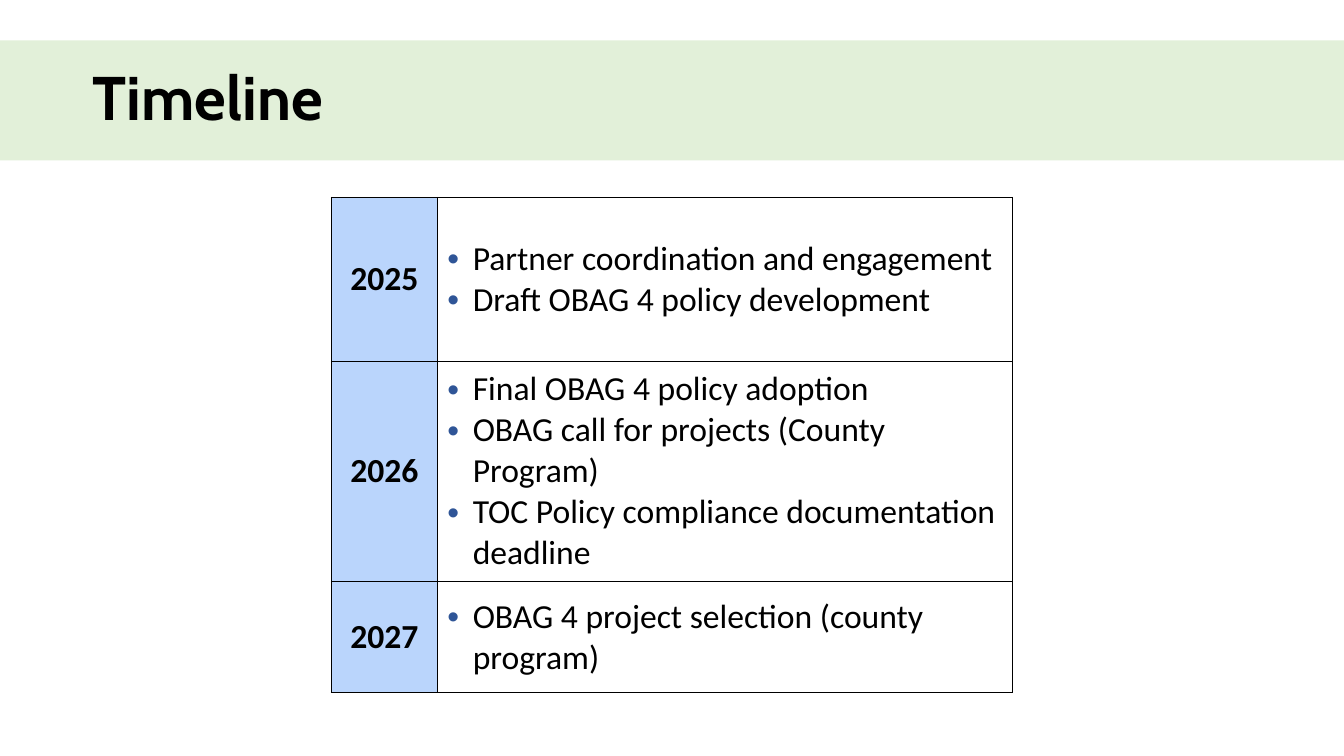
from lxml.etree import SubElement
from pptx import Presentation
from pptx.dml.color import RGBColor
from pptx.enum.text import MSO_ANCHOR as Anchor, PP_ALIGN as Align
from pptx.oxml.ns import qn
from pptx.util import Cm, Pt

BLACK, WHITE = "000000", "FFFFFF"
BAND_GREEN, YEAR_BLUE, BULLET_BLUE = "E2F0D9", "BAD5FC", "2F5597"

MILESTONES = [
    ("2025", 4.13, ["Partner coordination and engagement",
                    "Draft OBAG 4 policy development"]),
    ("2026", 5.56, ["Final OBAG 4 policy adoption",
                    "OBAG call for projects (County Program)",
                    "TOC Policy compliance documentation deadline"]),
    ("2027", 2.79, ["OBAG 4 project selection (county program)"]),
]


def paint(fill, color):
    fill.solid()
    fill.fore_color.rgb = RGBColor.from_string(color)


def style_text(para, font_name, size, bold):
    for span in para.runs:
        span.font.name = font_name
        span.font.size = Pt(size)
        span.font.bold = bold
        span.font.color.rgb = RGBColor.from_string(BLACK)


deck = Presentation()
deck.slide_width, deck.slide_height = Cm(33.87), Cm(19.05)
page = deck.slides.add_slide(deck.slide_layouts[5])

# Title band
title = page.shapes.title
title.left, title.top, title.width, title.height = Cm(0), Cm(1.02), Cm(33.87), Cm(3.02)
paint(title.fill, BAND_GREEN)
title.text_frame.text = "Timeline"
title.text_frame.vertical_anchor = Anchor.MIDDLE
para = title.text_frame.paragraphs[0]
para.alignment = Align.LEFT
para.line_spacing = 0.9
para._p.get_or_add_pPr().set("marL", str(Cm(2.08)))
style_text(para, "Cabin", 44, True)

# Timeline table
total_height = sum(height for _, height, _ in MILESTONES)
table = page.shapes.add_table(len(MILESTONES), 2, Cm(8.35), Cm(4.97),
                              Cm(17.17), Cm(total_height)).table
table.first_row = table.horz_banding = False
table.columns[0].width, table.columns[1].width = Cm(2.67), Cm(14.5)

for row, (year, height, tasks) in enumerate(MILESTONES):
    table.rows[row].height = Cm(height)
    year_cell, task_cell = table.cell(row, 0), table.cell(row, 1)
    year_cell.text_frame.text = year
    task_cell.text_frame.text = "\n".join(tasks)

    # Borders and fills
    for cell, color in ((year_cell, YEAR_BLUE), (task_cell, WHITE)):
        cell.vertical_anchor = Anchor.MIDDLE
        properties = cell._tc.get_or_add_tcPr()
        for side in ("a:lnL", "a:lnR", "a:lnT", "a:lnB"):
            line = SubElement(properties, qn(side), w=str(Pt(0.75)))
            SubElement(SubElement(line, qn("a:solidFill")), qn("a:srgbClr"), val=BLACK)
        paint(cell.fill, color)

    # Year label
    para = year_cell.text_frame.paragraphs[0]
    para.alignment = Align.CENTER
    style_text(para, "Calibri", 24, True)

    # Bulleted tasks
    for para in task_cell.text_frame.paragraphs:
        bullet = para._p.get_or_add_pPr()
        bullet.set("marL", str(Cm(0.64)))
        bullet.set("indent", str(-Cm(0.64)))
        SubElement(SubElement(bullet, qn("a:buClr")), qn("a:srgbClr"), val=BULLET_BLUE)
        SubElement(bullet, qn("a:buFont"), typeface="Arial")
        SubElement(bullet, qn("a:buChar"), char="•")
        style_text(para, "Calibri", 24, False)

deck.save("out.pptx")
